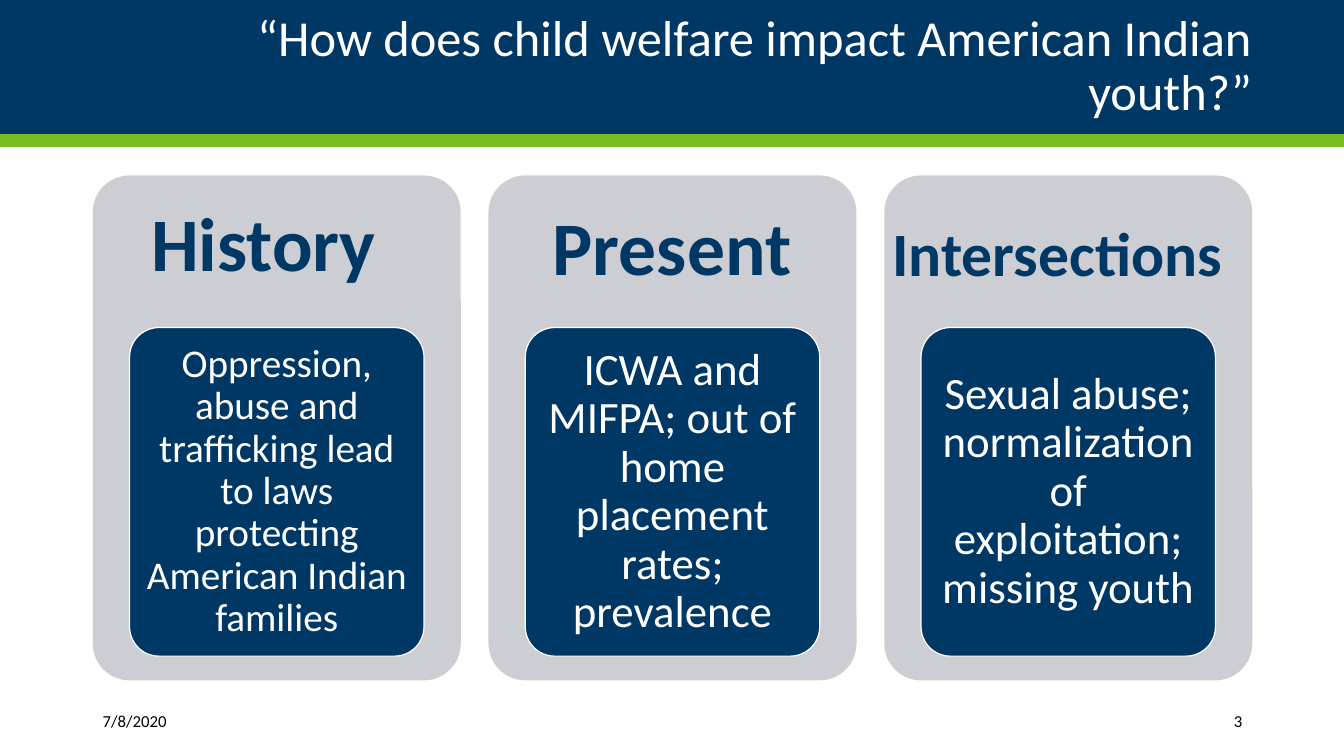
from pptx import Presentation
from pptx.dml.color import RGBColor
from pptx.enum.shapes import MSO_SHAPE
from pptx.enum.text import MSO_ANCHOR, MSO_AUTO_SIZE, PP_ALIGN
from pptx.util import Inches, Pt

NAVY = RGBColor(0x00, 0x38, 0x65)
GREEN = RGBColor(0x78, 0xBE, 0x21)
GRAY = RGBColor(0xCC, 0xCE, 0xD3)
WHITE = RGBColor(0xFF, 0xFF, 0xFF)
BLACK = RGBColor(0x00, 0x00, 0x00)
RECT, ROUNDED = MSO_SHAPE.RECTANGLE, MSO_SHAPE.ROUNDED_RECTANGLE
LEFT, CENTER, RIGHT = PP_ALIGN.LEFT, PP_ALIGN.CENTER, PP_ALIGN.RIGHT
TOP, MIDDLE = MSO_ANCHOR.TOP, MSO_ANCHOR.MIDDLE

prs = Presentation()
prs.slide_width, prs.slide_height = Inches(13.33), Inches(7.5)
slide = prs.slides.add_slide(prs.slide_layouts[5])


def add_block(kind, left, top, width, height, fill):
    block = slide.shapes.add_shape(kind, Inches(left), Inches(top), Inches(width), Inches(height))
    block.shadow.inherit = False
    block.fill.solid()
    block.fill.fore_color.rgb = fill
    block.line.fill.background()
    if kind == ROUNDED:
        block.adjustments[0] = 0.1
    return block


def write(holder, text, size, color, align, anchor=MIDDLE, margins=(0.1, 0.05), spacing=1.0, bold=False):
    frame = holder.text_frame
    frame.word_wrap = True
    frame.auto_size = MSO_AUTO_SIZE.NONE
    frame.vertical_anchor = anchor
    frame.margin_left = frame.margin_right = Inches(margins[0])
    frame.margin_top = frame.margin_bottom = Inches(margins[1])
    paragraph = frame.paragraphs[0]
    paragraph.alignment = align
    paragraph.line_spacing = spacing
    run = paragraph.add_run()
    run.text = text
    run.font.name = "Calibri"
    run.font.size = Pt(size)
    run.font.bold = bold
    run.font.color.rgb = color


# Title over the header bands
title = slide.shapes.title
title.left, title.top, title.width, title.height = Inches(0.92), Inches(0), Inches(11.5), Inches(1.33)
write(title, "“How does child welfare impact American Indian youth?”", 36, WHITE, RIGHT,
      margins=(0, 0.05), spacing=0.9)
for top, height, fill in [(0, 1.33, NAVY), (1.33, 0.13, GREEN)]:
    band = add_block(RECT, 0, top, 13.33, height, fill)
    title.element.addprevious(band.element)

# Three columns: gray panel with a navy card
PANEL_LEFT, PANEL_STEP = 0.92, 3.925
cards = [
    ("Oppression, abuse and trafficking lead to laws protecting American Indian families", 28, (0.08, 0.06)),
    ("ICWA and MIFPA; out of home placement rates; prevalence", 32, (0.09, 0.07)),
    ("Sexual abuse; normalization of exploitation; missing youth", 32, (0.09, 0.07)),
]
for column, (body, size, margins) in enumerate(cards):
    left = PANEL_LEFT + column * PANEL_STEP
    add_block(ROUNDED, left, 1.74, 3.65, 5.01, GRAY)
    card = add_block(ROUNDED, left + 0.365, 3.25, 2.92, 3.26, NAVY)
    card.line.color.rgb = WHITE
    card.line.width = Pt(0.85)
    write(card, body, size, WHITE, CENTER, margins=margins, spacing=0.9)

# Column headings, date and slide number
labels = [
    ("History", (1.4, 1.89, 2.78, 1.01), 54, NAVY, LEFT, TOP, (0.1, 0.05), 1.0, True),
    ("Present", (4.84, 1.74, 3.65, 1.5), 54, NAVY, CENTER, MIDDLE, (0.23, 0.23), 0.9, True),
    ("Intersections", (8.75, 2.08, 3.67, 1.14), 44, NAVY, LEFT, TOP, (0.1, 0.05), 1.0, True),
    ("7/8/2020", (0.92, 6.95, 1.49, 0.4), 12, BLACK, LEFT, MIDDLE, (0.1, 0.05), 1.0, False),
    ("3", (10.82, 6.95, 1.6, 0.4), 12, BLACK, RIGHT, MIDDLE, (0.1, 0.05), 1.0, False),
]
for text, place, *style in labels:
    label = slide.shapes.add_textbox(*[Inches(length) for length in place])
    write(label, text, *style)

prs.save("out.pptx")
